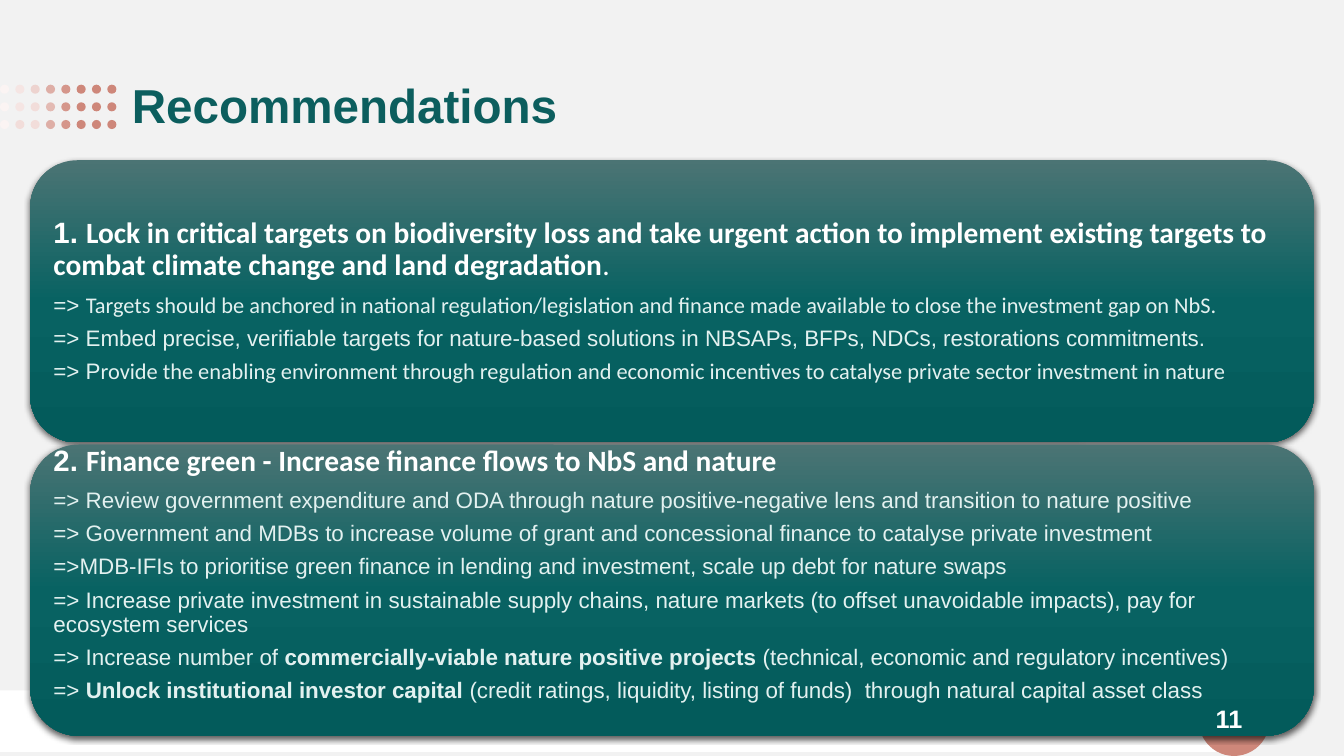
"""Build the Recommendations slide: dotted title and two gradient panels."""
from copy import deepcopy
from lxml import etree
from pptx import Presentation
from pptx.dml.color import RGBColor
from pptx.enum import shapes, text
from pptx.oxml import ns
from pptx.util import Inches, Pt

COLORS = {"page": "F2F2F2", "white": "FFFFFF", "rose": "CE877A",
          "title": "0C5E5E", "pale": "E3F1F0", "shadow": "000000"}
GRADIENT = [(0, "4B7474"), (0.5, "086262"), (1, "035B5B")]
FADED_DOTS = [["FBF4F3", "F5E5E3", "EDD3CF", "DEAEA6", "D5968B"],
              ["FBF4F3", "F5E5E3", "F2DDDA", "E3BAB3", "D5968B"],
              ["FBF4F3", "F2DDDA", "F2DDDA", "DEAEA6", "D5968B"]]
SOLID_DOTS = 3
DOT, DOT_TOP, COLUMN_STEP, ROW_STEP = 0.09, 0.84, 0.152, 0.175

HEAD, BODY = (21, "white"), (16, "pale")
ARIAL, BOLD, CALIBRI, CALIBRI_BOLD = (
    ("Arial", False), ("Arial", True), ("Calibri", False), ("Calibri", True))

TARGETS = [
    (HEAD, [("1. ", BOLD),
            ("Lock in critical targets on biodiversity loss and take urgent action to implement "
             "existing targets to combat climate change and land degradation", CALIBRI_BOLD),
            (".", CALIBRI)]),
    (BODY, [("=> ", ARIAL),
            ("Targets should be anchored in national regulation/legislation and finance made "
             "available to close the investment gap on NbS.", CALIBRI)]),
    (BODY, [("=> Embed precise, verifiable targets for nature-based solutions in NBSAPs, BFPs, "
             "NDCs, restorations commitments.", ARIAL)]),
    (BODY, [("=> P", ARIAL),
            ("rovide the enabling environment through regulation and economic incentives to "
             "catalyse private sector investment in nature", CALIBRI)]),
]
FINANCE = [
    (HEAD, [("2. ", BOLD),
            ("Finance green - Increase finance flows to NbS and nature", CALIBRI_BOLD)]),
    (BODY, [("=> Review government expenditure and ODA through nature positive-negative lens "
             "and transition to nature positive", ARIAL)]),
    (BODY, [("=> Government and MDBs to increase volume of grant and concessional finance to "
             "catalyse private investment", ARIAL)]),
    (BODY, [("=>MDB-IFIs to prioritise green finance in lending and investment, scale up debt "
             "for nature swaps", ARIAL)]),
    (BODY, [("=> Increase private investment in sustainable supply chains, nature markets (to "
             "offset unavoidable impacts), pay for ecosystem services", ARIAL)]),
    (BODY, [("=> Increase number of ", ARIAL),
            ("commercially-viable nature positive projects ", BOLD),
            ("(technical, economic and regulatory incentives)", ARIAL)]),
    (BODY, [("=> ", ARIAL), ("Unlock institutional investor capital ", BOLD),
            ("(credit ratings, liquidity, listing of funds)  through natural capital asset class",
             ARIAL)]),
]
TITLE = [((34, "title"), [("Recommendations", BOLD)])]
NUMBER = [((18, "white"), [("11", BOLD)])]
PANELS = [(1.59, 2.8, TARGETS, 0.09), (4.41, 2.89, FINANCE, 0.4)]
PANEL_LEFT, PANEL_WIDTH, PANEL_PAD = 0.3, 12.73, 0.14


def rgb(name):
    return RGBColor.from_string(COLORS.get(name, name))


def add_shape(page, kind, place, color):
    shape = page.shapes.add_shape(kind, *map(Inches, place))
    shape.shadow.inherit = False
    shape.fill.solid()
    shape.fill.fore_color.rgb = rgb(color)
    shape.line.fill.background()
    return shape


def add_text(page, place, paragraphs, bottom=0.05, side=0.1, align=text.PP_ALIGN.LEFT):
    frame = page.shapes.add_textbox(*map(Inches, place)).text_frame
    frame.word_wrap = True
    frame.vertical_anchor = text.MSO_ANCHOR.MIDDLE
    frame.margin_left = frame.margin_right = Inches(side)
    frame.margin_top, frame.margin_bottom = Inches(min(bottom, side)), Inches(bottom)
    for index, ((size, color), spans) in enumerate(paragraphs):
        para = frame.add_paragraph() if index else frame.paragraphs[0]
        para.alignment, para.line_spacing = align, 0.9
        para.space_after = Pt(round(size * 0.4, 1)) if len(paragraphs) > 1 else Pt(0)
        for words, (font, bold) in spans:
            span = para.add_run()
            span.text = words
            span.font.name, span.font.bold, span.font.size = font, bold, Pt(size)
            span.font.color.rgb = rgb(color)


def add_panel(page, top, height):
    panel = add_shape(page, shapes.MSO_SHAPE.ROUNDED_RECTANGLE,
                      (PANEL_LEFT, top, PANEL_WIDTH, height), "title")
    panel.fill.gradient()
    panel.fill.gradient_angle = 270
    stops = panel._element.spPr.find(".//" + ns.qn("a:gsLst"))
    stops.append(deepcopy(stops[0]))
    for stop, (position, color) in zip(panel.fill.gradient_stops, GRADIENT):
        stop.position, stop.color.rgb = position, rgb(color)
    effects = panel._element.spPr.find(ns.qn("a:effectLst"))
    shadow = etree.SubElement(effects, ns.qn("a:outerShdw"), blurRad=str(Pt(4.5)),
                              dist=str(Pt(1.5)), dir="5400000", rotWithShape="0")
    shade = etree.SubElement(shadow, ns.qn("a:srgbClr"), val=COLORS["shadow"])
    etree.SubElement(shade, ns.qn("a:alpha"), val="63000")


def main():
    deck = Presentation()
    deck.slide_width, deck.slide_height = Inches(13.33), Inches(7.5)
    page = deck.slides.add_slide(deck.slide_layouts[6])
    page.background.fill.solid()
    page.background.fill.fore_color.rgb = rgb("page")

    add_shape(page, shapes.MSO_SHAPE.RECTANGLE, (0, 6.85, 12.24, 0.61), "white")
    add_shape(page, shapes.MSO_SHAPE.OVAL, (11.89, 6.8, 0.7, 0.7), "rose")
    for row, faded in enumerate(FADED_DOTS):
        for column, color in enumerate(faded + ["rose"] * SOLID_DOTS):
            place = (column * COLUMN_STEP, DOT_TOP + row * ROW_STEP, DOT, DOT)
            add_shape(page, shapes.MSO_SHAPE.OVAL, place, color)

    add_text(page, (1.21, 0.35, 11.55, 1.45), TITLE)
    for top, height, paragraphs, bottom in PANELS:
        add_panel(page, top, height)
        place = (PANEL_LEFT + PANEL_PAD, top + PANEL_PAD,
                 PANEL_WIDTH - 2 * PANEL_PAD, height - 2 * PANEL_PAD)
        add_text(page, place, paragraphs, bottom, side=0.09)
    add_text(page, (9.42, 6.95, 3, 0.4), NUMBER, align=text.PP_ALIGN.RIGHT)
    deck.save("out.pptx")


if __name__ == "__main__":
    main()
